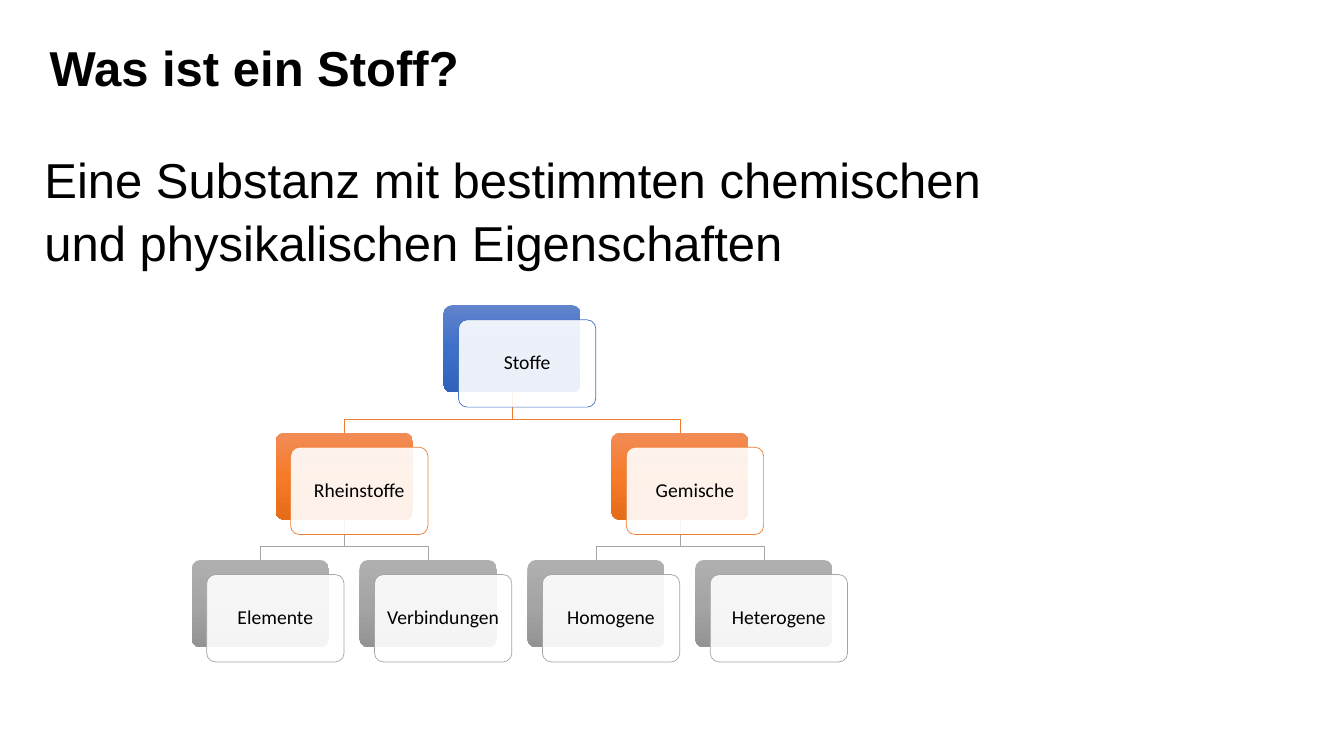
import pptx
import pptx.util
import pptx.dml.color
import pptx.enum.shapes
import pptx.enum.text
import pptx.oxml
import pptx.oxml.ns
from dataclasses import dataclass

Cm, Pt = pptx.util.Cm, pptx.util.Pt
RGB = pptx.dml.color.RGBColor.from_string
qn = pptx.oxml.ns.qn

# Content
HEADING = "Was ist ein Stoff?"
DEFINITION = "Eine Substanz mit bestimmten chemischen und physikalischen Eigenschaften"
SUBSTANCES = ("Stoffe", [
    ("Rheinstoffe", [("Elemente", []), ("Verbindungen", [])]),
    ("Gemische", [("Homogene", []), ("Heterogene", [])]),
])


@dataclass(frozen=True)
class Theme:
    text: str = "000000"
    card: str = "FFFFFF"
    card_opacity: int = 90
    accents: tuple = ("4472C4", "ED7D31", "A5A5A5")
    gradients: tuple = (("6183CB", "3E70CA", "3062BB"),
                        ("F18C57", "F67B28", "E56C19"),
                        ("AFAFAF", "A5A5A5", "939393"))
    body_font: str = "Arial"
    tree_font: str = "Calibri"
    body_size: int = 35
    tree_size: int = 14
    line: float = 0.5


THEME = Theme()

# Tree geometry in centimetres
FIRST_CENTRE, TREE_TOP = 6.56, 7.69
LEAF_STEP, LEVEL_STEP = 4.23, 3.21
BOX_W, BOX_H = 3.46, 2.2
CARD_DX, CARD_DY = 0.38, 0.37
ELBOW_DROP = 0.68


def place(node, level, placed, links, leaves):
    """Give each leaf the next column and centre each parent over its children."""
    label, children = node
    centres = [place(child, level + 1, placed, links, leaves) for child in children]
    if centres:
        centre = sum(centres) / len(centres)
    else:
        centre = FIRST_CENTRE + len(leaves) * LEAF_STEP
        leaves.append(label)
    placed.append((label, level, centre))
    links += [(level, centre, child_centre) for child_centre in centres]
    return centre


def level_top(level):
    return TREE_TOP + level * LEVEL_STEP


def add_run(paragraph, words, font, size, bold=False):
    run = paragraph.add_run()
    run.text = words
    run.font.name, run.font.size, run.font.bold = font, Pt(size), bold
    run.font.color.rgb = RGB(THEME.text)


def add_text(slide, words, box, spacing, bold=False):
    frame = slide.shapes.add_textbox(*map(Cm, box)).text_frame
    frame.word_wrap = True
    paragraph = frame.paragraphs[0]
    paragraph.line_spacing = spacing
    add_run(paragraph, words, THEME.body_font, THEME.body_size, bold)


def add_link(slide, level, parent, child):
    start = level_top(level) + BOX_H
    elbow = start + ELBOW_DROP
    points = [(parent, start), (parent, elbow), (child, elbow), (child, level_top(level + 1))]
    corners = [(Cm(x), Cm(y)) for x, y in points]
    builder = slide.shapes.build_freeform(*corners[0])
    builder.add_line_segments(corners[1:], close=False)
    link = builder.convert_to_shape()
    link.shadow.inherit = False
    link.fill.background()
    link.line.color.rgb = RGB(THEME.accents[level + 1])
    link.line.width = Pt(THEME.line)


def add_rounded(slide, left, top):
    box = slide.shapes.add_shape(pptx.enum.shapes.MSO_SHAPE.ROUNDED_RECTANGLE,
                                 Cm(left), Cm(top), Cm(BOX_W), Cm(BOX_H))
    box.adjustments[0] = 0.1
    box.shadow.inherit = False
    return box


def add_node(slide, label, level, centre):
    left, top = centre - BOX_W / 2, level_top(level)

    # Coloured back
    back = add_rounded(slide, left, top)
    back.line.fill.background()
    back.fill.gradient()
    back.fill.gradient_angle = 270
    stops = back.element.spPr.find(".//" + qn("a:gsLst"))
    for stop in list(stops):
        stops.remove(stop)
    for position, colour in zip((0, 50000, 100000), THEME.gradients[level]):
        stop = pptx.oxml.parse_xml(
            f'<a:gs {pptx.oxml.ns.nsdecls("a")} pos="{position}"><a:srgbClr val="{colour}"/></a:gs>')
        stops.append(stop)

    # Translucent card with the label
    card = add_rounded(slide, left + CARD_DX, top + CARD_DY)
    card.fill.solid()
    card.fill.fore_color.rgb = RGB(THEME.card)
    colour = card.element.spPr.find(qn("a:solidFill")).find(qn("a:srgbClr"))
    colour.append(pptx.oxml.parse_xml(
        f'<a:alpha {pptx.oxml.ns.nsdecls("a")} val="{THEME.card_opacity * 1000}"/>'))
    card.line.color.rgb = RGB(THEME.accents[level])
    card.line.width = Pt(THEME.line)
    frame = card.text_frame
    frame.word_wrap = True
    frame.vertical_anchor = pptx.enum.text.MSO_ANCHOR.MIDDLE
    frame.margin_left = frame.margin_right = Cm(0.15)
    frame.margin_top = frame.margin_bottom = Cm(0.15)
    paragraph = frame.paragraphs[0]
    paragraph.alignment = pptx.enum.text.PP_ALIGN.CENTER
    paragraph.line_spacing = 0.9
    add_run(paragraph, label, THEME.tree_font, THEME.tree_size)


def main():
    deck = pptx.Presentation()
    deck.slide_width, deck.slide_height = Cm(33.87), Cm(19.05)
    slide = deck.slides.add_slide(deck.slide_layouts[6])

    # Heading and definition
    add_text(slide, HEADING, (1, 1, 15.8, 2.29), 0.9, bold=True)
    add_text(slide, DEFINITION, (0.87, 3.53, 24.5, 11.13), Pt(45))

    # Tree: links behind, nodes in front
    placed, links = [], []
    place(SUBSTANCES, 0, placed, links, [])
    for link in links:
        add_link(slide, *link)
    for node in placed:
        add_node(slide, *node)

    deck.save("out.pptx")


if __name__ == "__main__":
    main()
